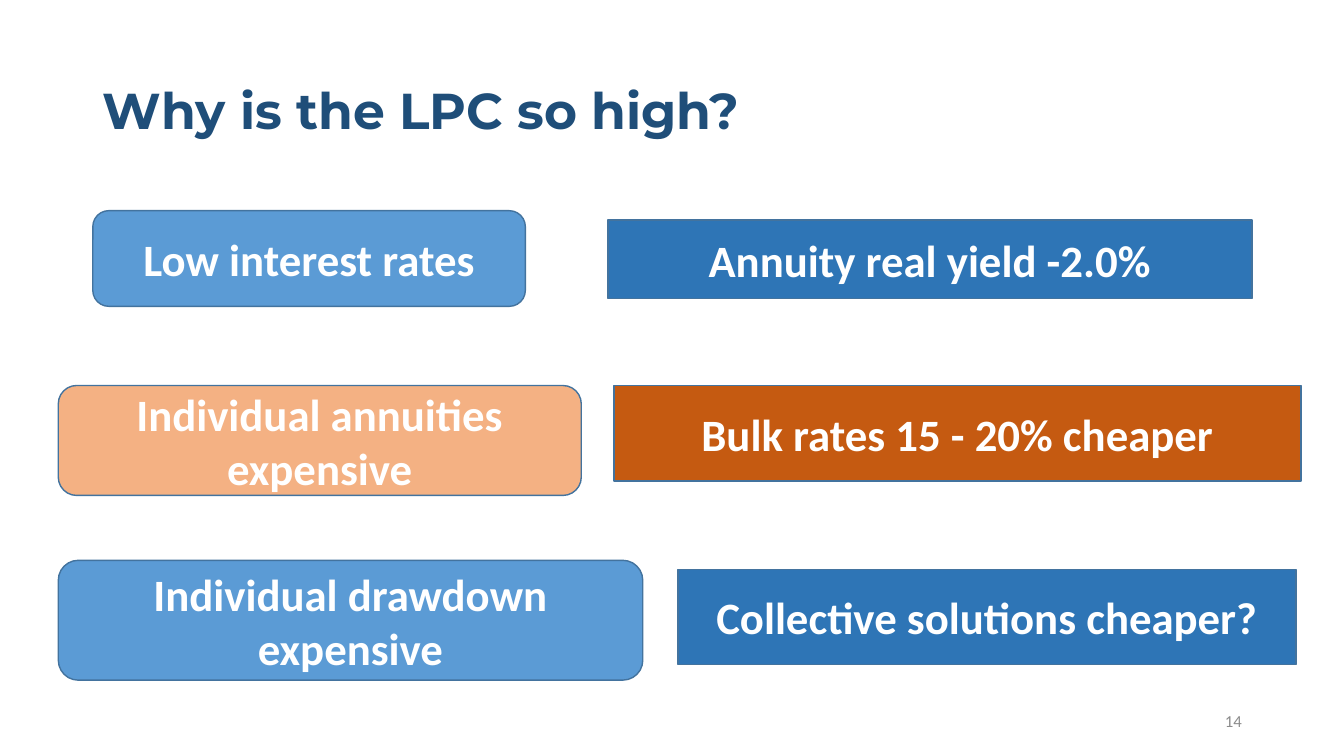
from pptx import Presentation
from pptx.dml.color import RGBColor
from pptx.enum.shapes import MSO_SHAPE as Shape
from pptx.enum.text import MSO_ANCHOR as Anchor, PP_ALIGN as Align
from pptx.util import Cm, Pt

WHITE = RGBColor(0xFF, 0xFF, 0xFF)
NAVY = RGBColor(0x1F, 0x4E, 0x79)
GREY = RGBColor(0x8C, 0x8C, 0x8C)
EDGE = RGBColor(0x43, 0x73, 0x9E)
SKY = RGBColor(0x5B, 0x9B, 0xD5)
BLUE = RGBColor(0x2E, 0x75, 0xB6)
PEACH = RGBColor(0xF4, 0xB1, 0x83)
RUST = RGBColor(0xC5, 0x5A, 0x11)

HEAD = {"name": "Montserrat", "size": Pt(36), "bold": True}
LABEL = {"name": "Calibri", "size": Pt(32), "bold": True}
SMALL = {"name": "Calibri", "size": Pt(12), "bold": False}

# Causes and answers: row box, cause width, answer offset and size, then texts and fills
FIRST, STEP = 5.31, 4.405
ROWS = [
    (2.34, 29.21, 2.41, 10.9, (0.23, 16.23, 1.98),
     ("Low interest rates", SKY), ("Annuity real yield -2.0%", BLUE)),
    (1.47, 31.32, 2.77, 13.18, (0, 17.32, 2.41),
     ("Individual annuities expensive", PEACH), ("Bulk rates 15 - 20% cheaper", RUST)),
    (1.47, 31.19, 3.02, 14.73, (0.23, 15.57, 2.39),
     ("Individual drawdown expensive", SKY), ("Collective solutions cheaper?", BLUE)),
]


def write(shape, text, style, color, align):
    frame = shape.text_frame
    frame.word_wrap = True
    frame.vertical_anchor = Anchor.MIDDLE
    para = frame.paragraphs[0]
    para.alignment = align
    run = para.add_run()
    run.text = text
    for key, value in style.items():
        setattr(run.font, key, value)
    run.font.color.rgb = color
    return para


def add_text(slide, box, text, style, color, align):
    shape = slide.shapes.add_textbox(*map(Cm, box))
    return write(shape, text, style, color, align)


def add_block(slide, kind, box, text, fill):
    block = slide.shapes.add_shape(kind, *map(Cm, box))
    block.shadow.inherit = False
    block.fill.solid()
    block.fill.fore_color.rgb = fill
    block.line.color.rgb = EDGE
    block.line.width = Pt(1)
    write(block, text, LABEL, WHITE, Align.CENTER)


def add_row(slide, box, width, place, cause, answer):
    """Cause at the left edge of the box, answer at its right edge."""
    left, top, span, high = box
    drop, wide, tall = place
    add_block(slide, Shape.ROUNDED_RECTANGLE, (left, top, width, high), *cause)
    add_block(slide, Shape.RECTANGLE,
              (left + span - wide, top + drop, wide, tall), *answer)


def add_slide(deck):
    slide = deck.slides.add_slide(deck.slide_layouts[6])

    # Title and page number
    title = add_text(slide, (2.34, 1.02, 29.21, 3.68),
                     "Why is the LPC so high?", HEAD, NAVY, Align.LEFT)
    title.line_spacing = 0.9
    add_text(slide, (23.93, 17.65, 7.62, 1.02), "14", SMALL, GREY, Align.RIGHT)

    # Rows
    for i, (left, span, high, *parts) in enumerate(ROWS):
        add_row(slide, (left, FIRST + i * STEP, span, high), *parts)


def main():
    deck = Presentation()
    deck.slide_width, deck.slide_height = Cm(33.87), Cm(19.05)
    add_slide(deck)
    deck.save("out.pptx")


if __name__ == "__main__":
    main()
